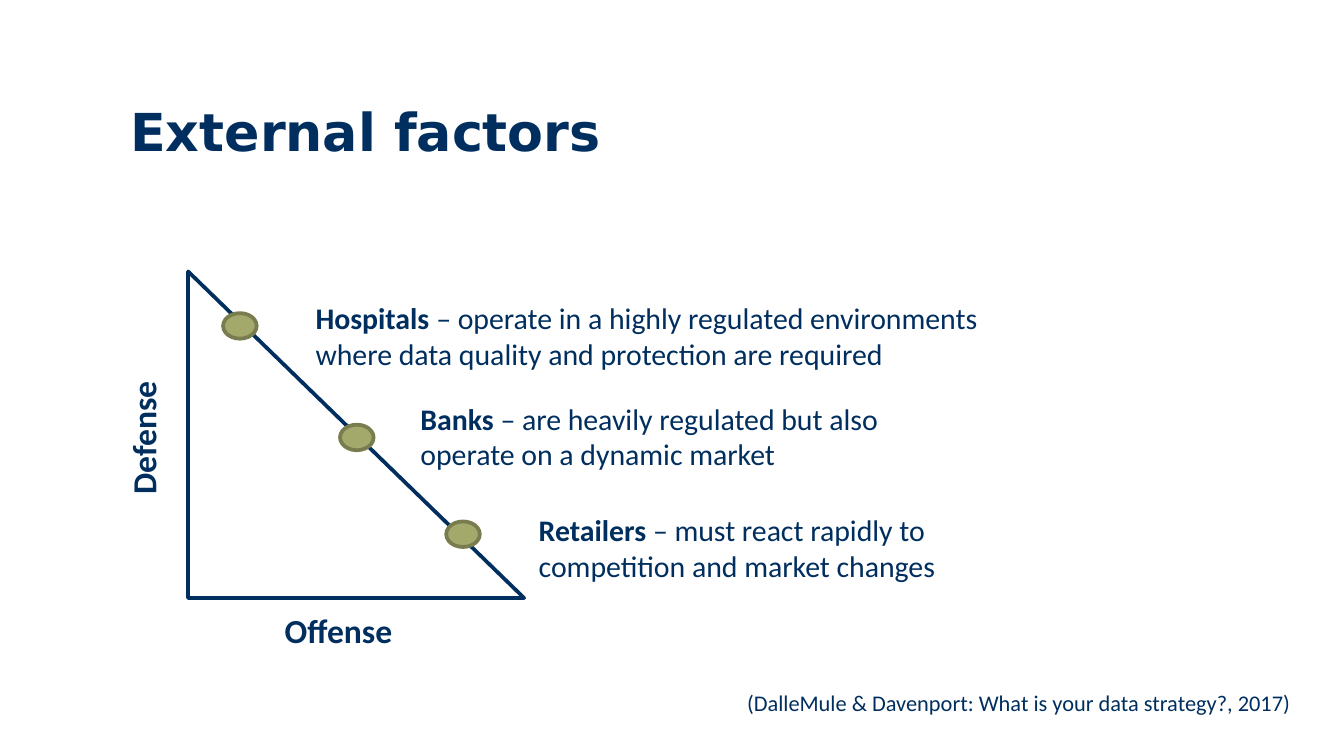
from dataclasses import dataclass

from pptx import Presentation
from pptx.dml.color import RGBColor
from pptx.enum.shapes import MSO_SHAPE
from pptx.enum.text import MSO_ANCHOR, MSO_AUTO_SIZE, PP_ALIGN
from pptx.util import Inches, Pt

TRIANGLE = MSO_SHAPE.RIGHT_TRIANGLE
OVAL = MSO_SHAPE.OVAL
TOP = MSO_ANCHOR.TOP
LEFT = PP_ALIGN.LEFT
FIT_SHAPE = MSO_AUTO_SIZE.SHAPE_TO_FIT_TEXT
NO_FIT = MSO_AUTO_SIZE.NONE
TITLE_ONLY = 5
SLIDE_WIDTH = 10
SLIDE_HEIGHT = SLIDE_WIDTH * 9 / 16


@dataclass(frozen=True)
class Theme:
    navy: RGBColor = RGBColor(0x00, 0x2F, 0x5F)
    white: RGBColor = RGBColor(0xFF, 0xFF, 0xFF)
    olive: RGBColor = RGBColor(0xA3, 0xA8, 0x6B)
    dark_olive: RGBColor = RGBColor(0x79, 0x7C, 0x4F)
    title_font: str = "DejaVu Sans"
    body_font: str = "Calibri"
    title_size: int = 28
    axis_size: int = 18
    factor_size: int = 16
    source_size: int = 12
    line_width: int = 2


THEME = Theme()

FACTORS = [
    ("Retailers ", "– must react rapidly to competition and market changes",
     (3.32, 3.88), (3.91, 3.76, 4.01, 0.64)),
    ("Banks ", "– are heavily regulated but also operate on a dynamic market",
     (2.53, 3.16), (3.03, 2.93, 4.01, 0.64)),
    ("Hospitals ", "– operate in a highly regulated environments "
     "where data quality and protection are required",
     (1.66, 2.33), (2.25, 2.18, 5.23, 0.64)),
]


def set_attributes(target, values):
    for name, value in values.items():
        setattr(target, name, value)


def add_run(paragraph, text, size, bold=False, font=THEME.body_font):
    run = paragraph.add_run()
    run.text = text
    set_attributes(run.font, {"name": font, "size": Pt(size), "bold": bold})
    run.font.color.rgb = THEME.navy


def set_title(slide, text, box):
    title = slide.shapes.title
    left, top, width, height = map(Inches, box)
    set_attributes(title, {"left": left, "top": top, "width": width, "height": height})
    set_attributes(title.text_frame, {"vertical_anchor": TOP, "auto_size": NO_FIT})
    paragraph = title.text_frame.paragraphs[0]
    paragraph.alignment = LEFT
    add_run(paragraph, text, THEME.title_size, True, THEME.title_font)


def add_text(slide, box, runs, size, wrap=False, rotation=0):
    shape = slide.shapes.add_textbox(*map(Inches, box))
    shape.rotation = rotation
    set_attributes(shape.text_frame, {"word_wrap": wrap, "auto_size": FIT_SHAPE})
    for text, bold in runs:
        add_run(shape.text_frame.paragraphs[0], text, size, bold)


def add_figure(slide, kind, box, fill, line):
    shape = slide.shapes.add_shape(kind, *map(Inches, box))
    shape.shadow.inherit = False
    shape.fill.solid()
    shape.fill.fore_color.rgb = fill
    shape.line.color.rgb = line
    shape.line.width = Pt(THEME.line_width)


def main():
    presentation = Presentation()
    set_attributes(presentation, {"slide_width": Inches(SLIDE_WIDTH),
                                  "slide_height": Inches(SLIDE_HEIGHT)})
    slide = presentation.slides.add_slide(presentation.slide_layouts[TITLE_ONLY])

    set_title(slide, "External factors", (0.87, 0.69, 8.88, 0.65))
    add_text(slide, (5.46, 5.08, 4.28, 0.3),
             [("(DalleMule & Davenport: What is your data strategy?, 2017)", False)],
             THEME.source_size)
    add_figure(slide, TRIANGLE, (1.4, 2.02, 2.5, 2.43), THEME.white, THEME.navy)
    add_text(slide, (2.02, 4.49, 1.02, 0.4), [("Offense", True)], THEME.axis_size)
    add_text(slide, (0.54, 3.05, 1.05, 0.4), [("Defense", True)], THEME.axis_size,
             rotation=270)

    for name, description, marker, box in FACTORS:
        add_figure(slide, OVAL, (*marker, 0.25, 0.19), THEME.olive, THEME.dark_olive)
        add_text(slide, box, [(name, True), (description, False)],
                 THEME.factor_size, wrap=True)

    presentation.save("out.pptx")


if __name__ == "__main__":
    main()
